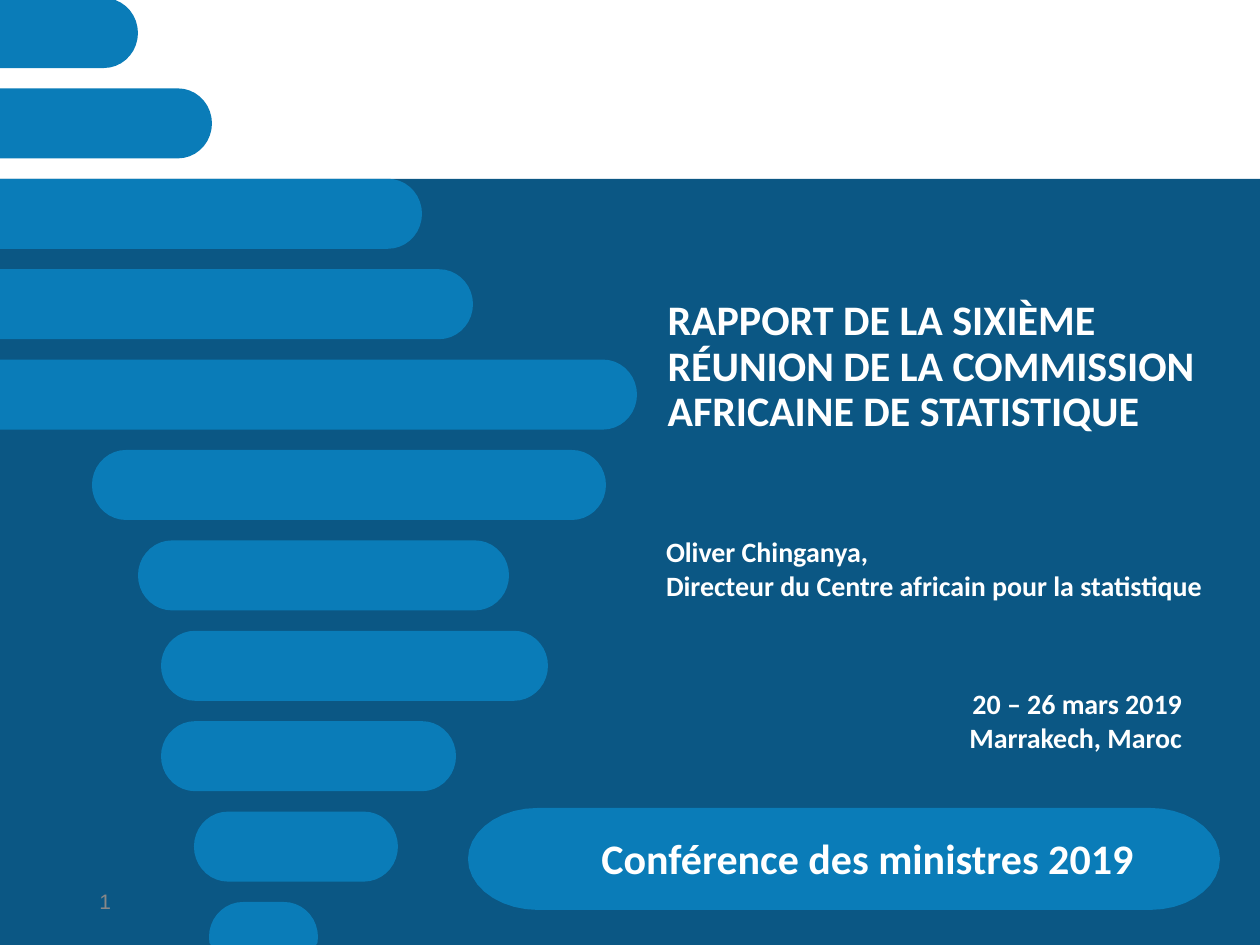
import math

import pptx
import pptx.dml.color
import pptx.enum.shapes
import pptx.enum.text
import pptx.util

SCALE = 914400 / 126  # EMU in one px
WIDE, HIGH = 1260, 945
NAVY, BLUE, WHITE, GREY = "0B5784", "0A7CB8", "FFFFFF", "888888"
ALIGN = pptx.enum.text.PP_ALIGN
ANCHOR = pptx.enum.text.MSO_ANCHOR

# Left and right edge of each bar, from the top down
BARS = [(0, 138), (0, 212), (0, 422), (0, 473), (0, 637), (92, 606),
        (138, 509), (161, 548), (161, 456), (194, 398), (209, 318)]
FIRST, PITCH, THICK = -2, 90.4, 70


def emu(px):
    return pptx.util.Emu(round(px * SCALE))


def color(code):
    return pptx.dml.color.RGBColor.from_string(code)


def paint(shape, code):
    shape.shadow.inherit = False
    shape.fill.solid()
    shape.fill.fore_color.rgb = color(code)
    shape.line.fill.background()


def arc(x, y, rx, ry, start):
    """Points of a half ellipse, clockwise, kept within the slide."""
    for step in range(19):
        turn = math.radians(start + step * 10)
        down = y + ry * math.sin(turn)
        yield emu(x + rx * math.cos(turn)), emu(min(max(down, 0), HIGH))


def add_bar(slide, left, top, right, height, rx):
    """A bar with round ends; the left end is square at the slide edge."""
    ry = height / 2
    mid = top + ry
    points = list(arc(right - rx, mid, rx, ry, -90))
    if left:
        points += arc(left + rx, mid, rx, ry, 90)
    else:
        points += [(0, points[-1][1]), (0, points[0][1])]
    form = slide.shapes.build_freeform(*points[0], scale=1.0)
    form.add_line_segments(points[1:], close=True)
    paint(form.convert_to_shape(), BLUE)


def set_text(shape, text, size, code=WHITE, face="Calibri", bold=True,
             align=ALIGN.LEFT, anchor=ANCHOR.TOP, inset=None, space=None):
    frame = shape.text_frame
    frame.word_wrap = True
    frame.vertical_anchor = anchor
    if inset:
        (frame.margin_left, frame.margin_top, frame.margin_right,
         frame.margin_bottom) = map(emu, inset)
    frame.text = text
    for para in frame.paragraphs:
        para.alignment = align
        if space:
            para.line_spacing = space
        font = para.font
        font.name, font.size, font.bold = face, pptx.util.Pt(size), bold
        font.color.rgb = color(code)


def add_text(slide, box, text, size, **style):
    set_text(slide.shapes.add_textbox(*map(emu, box)), text, size, **style)


def main():
    deck = pptx.Presentation()
    deck.slide_width, deck.slide_height = emu(WIDE), emu(HIGH)
    slide = deck.slides.add_slide(deck.slide_layouts[5])

    # Backdrop
    back = slide.shapes.add_shape(
        pptx.enum.shapes.MSO_SHAPE.RECTANGLE,
        *map(emu, (0, 179, WIDE, HIGH - 179)))
    paint(back, NAVY)

    # Bars
    for row, (left, right) in enumerate(BARS):
        add_bar(slide, left, FIRST + row * PITCH, right, THICK, 34)

    # Title, brought in front of the backdrop
    title = slide.shapes.title
    title.element.getparent().append(title.element)
    title.left, title.top, title.width, title.height = map(
        emu, (655, 280, 587, 175))
    set_text(title, "RAPPORT DE LA SIXIÈME RÉUNION DE LA COMMISSION "
             "AFRICAINE DE STATISTIQUE", 24, anchor=ANCHOR.MIDDLE, space=0.9)

    # Speaker, date and place
    flush = (0, 0, 0, 0)
    add_text(slide, (666, 535, 563, 68), "Oliver Chinganya,\n"
             "Directeur du Centre africain pour la statistique", 16,
             inset=flush)
    add_text(slide, (785, 687, 397, 68),
             "20 – 26 mars 2019\vMarrakech, Maroc", 16,
             align=ALIGN.RIGHT, inset=flush)

    # Event banner
    add_bar(slide, 468, 808, 1220, 102, 70)
    add_text(slide, (495, 827, 692, 63), "Conférence des ministres 2019", 24,
             align=ALIGN.CENTER, inset=(59, 6, 6, 6))

    # Slide number
    add_text(slide, (87, 876, 284, 50), "1", 12, code=GREY, face="Arial",
             bold=False, anchor=ANCHOR.MIDDLE)

    deck.save("out.pptx")


if __name__ == "__main__":
    main()
